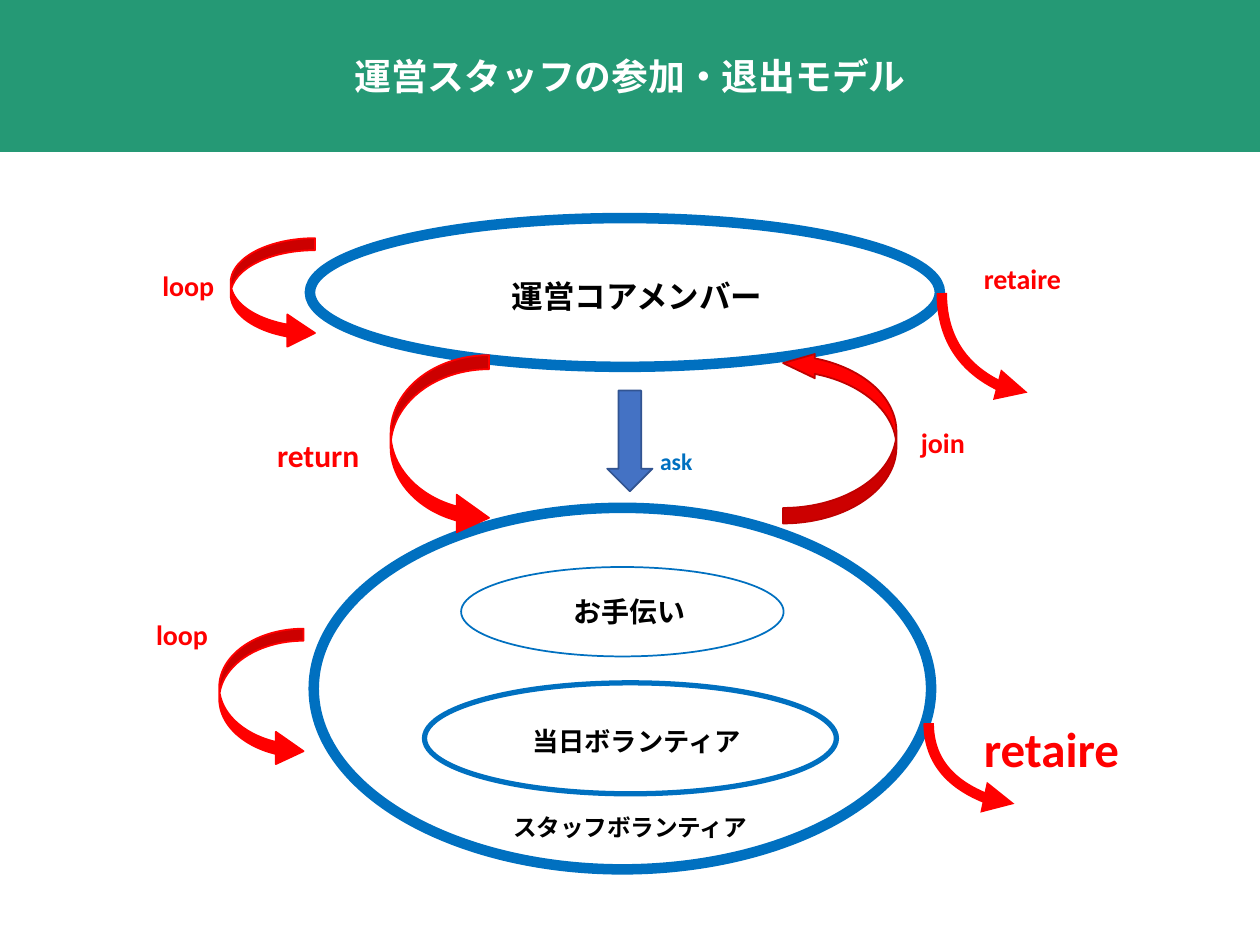
"""Build a slide showing how event staff join, move between and leave the groups."""
from typing import NamedTuple, Optional

from lxml.etree import SubElement
from pptx import Presentation
from pptx.dml.color import RGBColor
from pptx.enum.shapes import MSO_CONNECTOR as Connector
from pptx.enum.shapes import MSO_SHAPE as Preset
from pptx.enum.text import MSO_ANCHOR as Anchor
from pptx.enum.text import MSO_AUTO_SIZE as AutoSize
from pptx.enum.text import PP_ALIGN as Align
from pptx.oxml.ns import qn
from pptx.slide import Slide
from pptx.text.text import TextFrame
from pptx.util import Pt

WHITE = RGBColor(0xFF, 0xFF, 0xFF)
BLACK = RGBColor(0x00, 0x00, 0x00)
RED = RGBColor(0xFF, 0x00, 0x00)
DARK_RED = RGBColor(0xC0, 0x00, 0x00)
BLUE = RGBColor(0x00, 0x70, 0xC0)
ARROW_BLUE = RGBColor(0x44, 0x72, 0xC4)
ARROW_EDGE = RGBColor(0x32, 0x54, 0x91)
GREEN = RGBColor(0x25, 0x99, 0x75)
FONT = "Calibri"


class Box(NamedTuple):
    left: float
    top: float
    width: float
    height: float


class Figure(NamedTuple):
    preset: Preset
    box: Box
    line: RGBColor
    weight: float = 1
    fill: Optional[RGBColor] = None
    adjustments: tuple[float, ...] = ()
    rotation: float = 0


class Label(NamedTuple):
    text: str
    box: Box
    size: float
    color: RGBColor = RED
    align: Align = Align.LEFT


def group_oval(box: Box, weight: float) -> Figure:
    return Figure(Preset.OVAL, box, BLUE, weight)


def return_arrow(box: Box) -> Figure:
    return Figure(Preset.CURVED_RIGHT_ARROW, box, RED, 1, RED, (0.143, 0.382, 0.328))


FIGURES = (
    group_oval(Box(177.1, 124.6, 360, 85), 6),
    group_oval(Box(179.3, 290.2, 352.8, 206.6), 6),
    return_arrow(Box(125.3, 359.3, 48.2, 79.2)),
    Figure(Preset.CURVED_UP_ARROW, Box(430.6, 217.4, 98.6, 64.8), DARK_RED, 1, RED,
           (0.137, 0.214, 0.28), 270),
    Figure(Preset.DOWN_ARROW, Box(347, 223.2, 25.9, 57.6), ARROW_EDGE, 1, ARROW_BLUE),
    return_arrow(Box(131.8, 136.1, 48.2, 63.4)),
    return_arrow(Box(223.2, 203, 56.2, 103.7)),
    group_oval(Box(263.5, 324, 184.3, 51.1), 1),
    group_oval(Box(242.6, 390.2, 235.4, 63.4), 3),
)
EXITS = (Box(534.2, 171.4, 56.9, 49), Box(532.1, 411.8, 46.1, 49))
LABELS = (
    Label("運営コアメンバー", Box(262.1, 154.8, 203.8, 28.8), 18, BLACK, Align.CENTER),
    Label("スタッフボランティア", Box(272.2, 460.8, 175.7, 29.5), 13.5, BLACK, Align.CENTER),
    Label("join", Box(519.1, 239.8, 39.6, 26.6), 16),
    Label("retaire", Box(555.1, 406.8, 93.6, 41), 28),
    Label("loop", Box(82.1, 349.2, 44.6, 26.6), 16),
    Label("loop", Box(85.7, 149.8, 44.6, 26.6), 16),
    Label("ask", Box(370.1, 252, 42.5, 29.5), 13.5, BLUE),
    Label("retaire", Box(555.1, 146.2, 62.6, 26.6), 16),
    Label("return", Box(151.2, 245.5, 68.4, 28.8), 18),
    Label("当日ボランティア", Box(295.9, 411.1, 135.4, 25.2), 15, BLACK, Align.CENTER),
    Label("お手伝い", Box(278.6, 336.2, 162.7, 26.6), 16, BLACK, Align.CENTER),
)
BANNER = Figure(Preset.RECTANGLE, Box(0, 0, 720, 86.4), GREEN, 1, GREEN)
TITLE = Label("運営スタッフの参加・退出モデル", BANNER.box, 21, WHITE, Align.CENTER)


def write_label(frame: TextFrame, label: Label) -> None:
    """Write one bold run in the style of the label."""
    frame.word_wrap = True
    para = frame.paragraphs[0]
    para.alignment = label.align
    span = para.add_run()
    span.text = label.text
    span.font.name = FONT
    span.font.size = Pt(label.size)
    span.font.bold = True
    span.font.color.rgb = label.color


def draw_figure(page: Slide, figure: Figure) -> TextFrame:
    """Draw a preset shape and return its text frame."""
    shape = page.shapes.add_shape(figure.preset, *map(Pt, figure.box))
    shape.shadow.inherit = False
    shape.rotation = figure.rotation
    for index, value in enumerate(figure.adjustments):
        shape.adjustments[index] = value
    if figure.fill is None:
        shape.fill.background()
    else:
        shape.fill.solid()
        shape.fill.fore_color.rgb = figure.fill
    shape.line.color.rgb = figure.line
    shape.line.width = Pt(figure.weight)
    return shape.text_frame


def draw_label(page: Slide, label: Label) -> None:
    """Draw a text box that holds one label."""
    frame = page.shapes.add_textbox(*map(Pt, label.box)).text_frame
    write_label(frame, label)
    frame.auto_size = AutoSize.SHAPE_TO_FIT_TEXT


def draw_exit(page: Slide, box: Box) -> None:
    """Draw a quarter-curve arrow that leaves downwards and ends to the right."""
    arrow = page.shapes.add_connector(
        Connector.CURVE, Pt(box.left + box.width), Pt(box.top),
        Pt(box.left), Pt(box.top + box.height))
    arrow.line.color.rgb = RED
    arrow.line.width = Pt(6)
    properties = arrow._element.spPr
    properties.find(qn("a:xfrm")).set("rot", str(270 * 60000))
    properties.find(qn("a:prstGeom")).set("prst", "curvedConnector2")
    SubElement(properties.find(qn("a:ln")), qn("a:tailEnd"), type="triangle")
    SubElement(properties, qn("a:effectLst"))


def main() -> None:
    """Build and save the deck."""
    deck = Presentation()
    deck.slide_width, deck.slide_height = Pt(720), Pt(540)
    page = deck.slides.add_slide(deck.slide_layouts[6])
    for figure in FIGURES:
        draw_figure(page, figure)
    for box in EXITS:
        draw_exit(page, box)
    for label in LABELS:
        draw_label(page, label)
    banner_frame = draw_figure(page, BANNER)
    banner_frame.vertical_anchor = Anchor.MIDDLE
    write_label(banner_frame, TITLE)
    deck.save("out.pptx")


if __name__ == "__main__":
    main()
